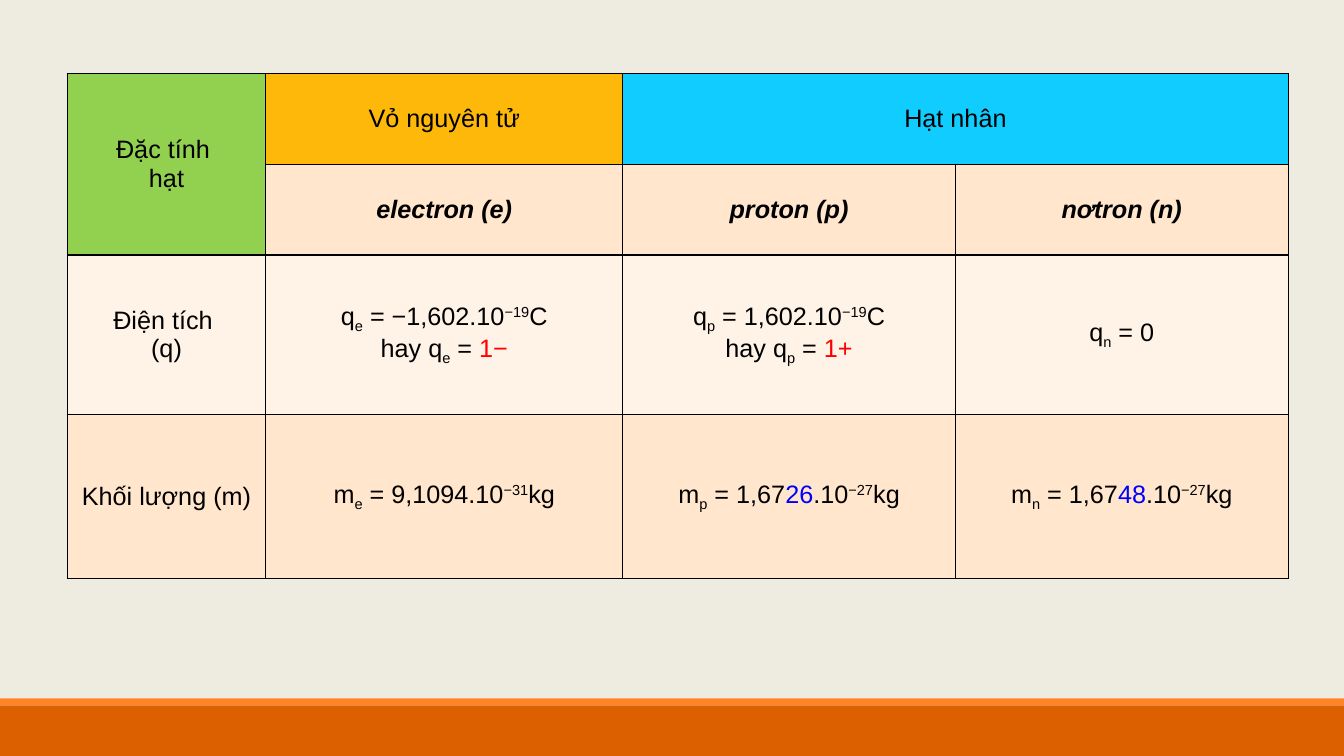
import pptx
import pptx.dml.color
import pptx.enum.shapes
import pptx.enum.text
import pptx.oxml
import pptx.oxml.ns
import pptx.util

WIDTH, HEIGHT = 13.33, 7.5
BLACK, RED, BLUE = "000000", "FF0000", "0000FF"
GREEN, AMBER, CYAN = "92D050", "FEB80A", "11CCFF"
PEACH, CREAM = "FFE6CC", "FFF3E7"
COLUMNS = [1.97, 3.54, 3.3, 3.3]
ROWS = [0.9, 0.9, 1.58, 1.63]


def color(hex_string):
    return pptx.dml.color.RGBColor.from_string(hex_string)


def fill(target, hex_string):
    target.fill.solid()
    target.fill.fore_color.rgb = color(hex_string)


def write(paragraph, text, size=18, ink=BLACK, emphasis=False, baseline=0):
    """Add one run of text to a centred paragraph."""
    paragraph.alignment = pptx.enum.text.PP_ALIGN.CENTER
    run = paragraph.add_run()
    run.text = text
    font = run.font
    font.name, font.size = "Arial", pptx.util.Pt(size)
    font.bold = font.italic = emphasis
    font.color.rgb = color(ink)
    if baseline:
        font._element.set("baseline", str(baseline * 1000))


# Pieces of a formula: a text with its format
def plain(text):
    return text, {}


def lower(text):
    return text, {"baseline": -25}


def upper(text):
    return text, {"baseline": 30}


def tinted(text, ink):
    return text, {"ink": ink}


def charge(particle, sign, unit_charge):
    """Two lines: the charge in coulombs, then in elementary units."""
    return [
        [plain("q"), lower(particle), plain(f" = {sign}1,602.10"), upper("−19"), plain("C")],
        [plain("hay q"), lower(particle), plain(" = "), tinted(unit_charge, RED)],
    ]


def mass(particle, digits, power, varying=""):
    line = [plain("m"), lower(particle), plain(f" = {digits}")]
    if varying:
        line.append(tinted(varying, BLUE))
    return [line + [plain(".10"), upper(power), plain("kg")]]


def label(*lines, emphasis=False):
    return [[(line, {"emphasis": emphasis})] for line in lines]


def add_borders(cell, width=1):
    properties = cell._tc.get_or_add_tcPr()
    for side in ("lnL", "lnR", "lnT", "lnB"):
        properties.append(pptx.oxml.parse_xml(
            f'<a:{side} {pptx.oxml.ns.nsdecls("a")} w="{pptx.util.Pt(width)}">'
            f'<a:solidFill><a:srgbClr val="{BLACK}"/></a:solidFill></a:{side}>'))


def add_bar(slide, left, top, width, height, hex_string):
    box = [pptx.util.Inches(length) for length in (left, top, width, height)]
    bar = slide.shapes.add_shape(pptx.enum.shapes.MSO_SHAPE.RECTANGLE, *box)
    bar.shadow.inherit = False
    bar.line.fill.background()
    fill(bar, hex_string)


def add_footer(slide, left, top, width, height):
    """A thin light strip above a dark band."""
    strip = height * 0.12
    add_bar(slide, left, top + strip, width, height - strip, "DC5F00")
    add_bar(slide, left, top, width, strip, "FF8427")


def add_particle_table(slide, left, top):
    # Each cell is a list of lines with a fill; None is covered by a merge
    contents = [
        [(label("Đặc tính ", "hạt"), GREEN), (label("Vỏ nguyên tử"), AMBER),
         (label("Hạt nhân"), CYAN), None],
        [None] + [(label(name, emphasis=True), PEACH)
                  for name in ("electron (e)", "proton (p)", "nơtron (n)")],
        [(lines, CREAM) for lines in (
            label("Điện tích ", "(q)"), charge("e", "−", "1−"), charge("p", "", "1+"),
            [[plain("q"), lower("n"), plain(" = 0")]])],
        [(lines, PEACH) for lines in (
            label("Khối lượng (m)"), mass("e", "9,1094", "−31"),
            mass("p", "1,67", "−27", "26"), mass("n", "1,67", "−27", "48"))],
    ]
    box = [pptx.util.Inches(length) for length in (left, top, sum(COLUMNS), sum(ROWS))]
    table = slide.shapes.add_table(len(ROWS), len(COLUMNS), *box).table
    table.first_row = table.horz_banding = False
    for column, width in zip(table.columns, COLUMNS):
        column.width = pptx.util.Inches(width)
    for row, height in zip(table.rows, ROWS):
        row.height = pptx.util.Inches(height)
    table.cell(0, 0).merge(table.cell(1, 0))
    table.cell(0, 2).merge(table.cell(0, 3))

    for row_index, row in enumerate(contents):
        for column_index, content in enumerate(row):
            cell = table.cell(row_index, column_index)
            add_borders(cell)
            if content is None:
                continue
            lines, background = content
            fill(cell, background)
            cell.vertical_anchor = pptx.enum.text.MSO_ANCHOR.MIDDLE
            frame = cell.text_frame
            for index, line in enumerate(lines):
                paragraph = frame.add_paragraph() if index else frame.paragraphs[0]
                for text, text_format in line:
                    write(paragraph, text, **text_format)


def main():
    presentation = pptx.Presentation()
    presentation.slide_width = pptx.util.Inches(WIDTH)
    presentation.slide_height = pptx.util.Inches(HEIGHT)
    slide = presentation.slides.add_slide(presentation.slide_layouts[6])
    fill(slide.background, "EEECE1")
    footer_height = HEIGHT * 0.076
    add_footer(slide, 0, HEIGHT - footer_height, WIDTH, footer_height)
    add_particle_table(slide, WIDTH * 0.05, 0.73)
    presentation.save("out.pptx")


if __name__ == "__main__":
    main()
